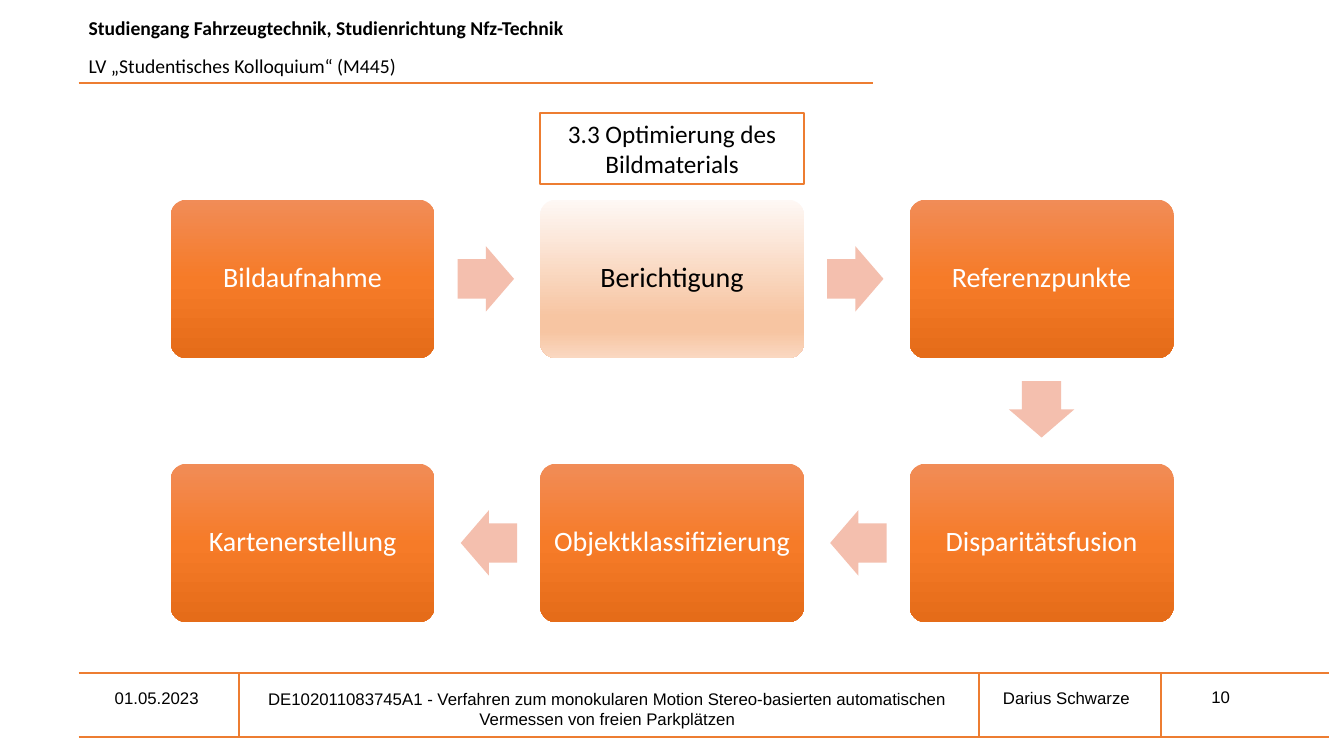
from lxml import etree
from pptx import Presentation
from pptx.dml.color import RGBColor
from pptx.enum.shapes import MSO_CONNECTOR as CONN, MSO_SHAPE as SHAPE
from pptx.enum.text import MSO_ANCHOR as ANCHOR, MSO_AUTO_SIZE as AUTO, PP_ALIGN as ALIGN
from pptx.oxml.ns import qn
from pptx.util import Pt

ACCENT, BLACK, WHITE, ARROW = "ED7D31", "000000", "FFFFFF", "F4BFAE"
TITLE = "3.3 Optimierung des Bildmaterials"
HEADER = [
    ("Studiengang Fahrzeugtechnik, Studienrichtung Nfz-Technik", True, 0),
    ("LV „Studentisches Kolloquium“ (M445)", False, 10),
]
FOOTER = [
    ("01.05.2023", (74.9, 487.4, 233.3, 21.6), ALIGN.LEFT, ANCHOR.TOP),
    ("DE102011083745A1 - Verfahren zum monokularen Motion Stereo-basierten "
     "automatischen Vermessen von freien Parkplätzen",
     (167.8, 488.2, 532.1, 58.3), ALIGN.CENTER, ANCHOR.TOP),
    ("Darius Schwarze", (686.2, 483.8, 151.2, 28.8), ALIGN.CENTER, ANCHOR.MIDDLE),
    ("10", (858.2, 486.7, 67, 21.6), ALIGN.LEFT, ANCHOR.TOP),
]
RULES = [
    (56.2, 59, 623.5, 59),
    (56.2, 481, 949, 481),
    (56.2, 526.3, 949, 526.3),
    (170.6, 481, 170.6, 526.3),
    (699.1, 480.2, 699.1, 525.6),
    (829.4, 481, 829.4, 526.3),
]
STRONG = [(0, "F18C57"), (50, "F67B28"), (100, "E56C19")]
PALE = [(0, "FEF8F5"), (74, "F7C5A2"), (83, "F7C5A2"), (100, "FAD8C1")]
STEPS = [
    ("Bildaufnahme", 0, 0),
    ("Berichtigung", 1, 0),
    ("Referenzpunkte", 2, 0),
    ("Disparitätsfusion", 2, 1),
    ("Objektklassifizierung", 1, 1),
    ("Kartenerstellung", 0, 1),
]
CURRENT = "Berichtigung"
LEFT, TOP, STEP_X, STEP_Y = 121.9, 142.6, 263.9, 188.6
BOX_W, BOX_H, ARROW_W, ARROW_H = 188.6, 113.2, 40.3, 46.8
ARROW_SHIFT = 1.1


def color(value):
    return RGBColor.from_string(value)


def points(*values):
    return [Pt(v) for v in values]


def set_all(target, values):
    for name, value in values.items():
        setattr(target, name, value)


def write(p, text, size, name="Calibri", hex_color=BLACK, bold=False, **para):
    set_all(p, para)
    r = p.add_run()
    r.text = text
    set_all(r.font, {"size": Pt(size), "name": name, "bold": bold})
    r.font.color.rgb = color(hex_color)


def add_text(s, box, anchor=ANCHOR.TOP):
    tf = s.shapes.add_textbox(*points(*box)).text_frame
    set_all(tf, {"word_wrap": True, "vertical_anchor": anchor})
    return tf


def add_plain(s, kind, box):
    sp = s.shapes.add_shape(kind, *points(*box))
    sp.shadow.inherit = False
    sp.line.fill.background()
    return sp


def set_gradient(sp, stops):
    sp.fill.gradient()
    sp.fill.gradient_angle = 270
    gs_list = sp._element.spPr.find(qn("a:gradFill")).find(qn("a:gsLst"))
    for old in list(gs_list):
        gs_list.remove(old)
    for pos, value in stops:
        gs = etree.SubElement(gs_list, qn("a:gs"), pos=str(pos * 1000))
        etree.SubElement(gs, qn("a:srgbClr"), val=value)


def add_rule(s, ends):
    line = s.shapes.add_connector(CONN.STRAIGHT, *points(*ends))
    line.line.color.rgb = color(ACCENT)
    line.line.width = Pt(1.5)
    etree.SubElement(line._element.spPr, qn("a:effectLst"))


def add_step(s, text, col, row):
    box = (LEFT + col * STEP_X, TOP + row * STEP_Y, BOX_W, BOX_H)
    sp = add_plain(s, SHAPE.ROUNDED_RECTANGLE, box)
    sp.adjustments[0] = 0.1
    set_gradient(sp, PALE if text == CURRENT else STRONG)
    tf = sp.text_frame
    set_all(tf, {"word_wrap": True, "vertical_anchor": ANCHOR.MIDDLE})
    set_all(tf, {f"margin_{side}": Pt(5.7) for side in ("left", "right", "top", "bottom")})
    write(tf.paragraphs[0], text, 20, hex_color=BLACK if text == CURRENT else WHITE,
          alignment=ALIGN.CENTER, line_spacing=0.9)


def add_arrow(s, start, end):
    dx, dy = end[1] - start[1], end[2] - start[2]
    x = LEFT + BOX_W / 2 + (start[1] + dx / 2) * STEP_X - dx * ARROW_SHIFT
    y = TOP + BOX_H / 2 + (start[2] + dy / 2) * STEP_Y - dy * ARROW_SHIFT
    sp = add_plain(s, SHAPE.RIGHT_ARROW,
                   (x - ARROW_W / 2, y - ARROW_H / 2, ARROW_W, ARROW_H))
    sp.adjustments[0], sp.adjustments[1] = 0.6, 0.5
    sp.rotation = 90 if dy else 180 if dx < 0 else 0
    sp.fill.solid()
    sp.fill.fore_color.rgb = color(ARROW)


def add_title(s):
    sp = s.shapes.title
    box = points(LEFT + STEP_X, 80.6, BOX_W, 51.1)
    set_all(sp, dict(zip(("left", "top", "width", "height"), box)))
    sp.fill.solid()
    sp.fill.fore_color.rgb = color(WHITE)
    sp.line.color.rgb = color(ACCENT)
    sp.line.width = Pt(1.5)
    tf = sp.text_frame
    set_all(tf, {"word_wrap": True, "auto_size": AUTO.NONE, "vertical_anchor": ANCHOR.TOP})
    write(tf.paragraphs[0], TITLE, 18, alignment=ALIGN.CENTER)


def main():
    prs = Presentation()
    prs.slide_width, prs.slide_height = points(960, 540)
    s = prs.slides.add_slide(prs.slide_layouts[5])
    add_title(s)
    tf = add_text(s, (56.2, 7.9, 648, 36.7))
    for i, (text, bold, before) in enumerate(HEADER):
        p = tf.add_paragraph() if i else tf.paragraphs[0]
        write(p, text, 14, bold=bold, space_before=Pt(before))
    for text, box, align, anchor in FOOTER:
        tf = add_text(s, box, anchor)
        write(tf.paragraphs[0], text, 12, "Arial", alignment=align)
    for ends in RULES:
        add_rule(s, ends)
    for step in STEPS:
        add_step(s, *step)
    for start, end in zip(STEPS, STEPS[1:]):
        add_arrow(s, start, end)
    prs.save("out.pptx")


if __name__ == "__main__":
    main()
